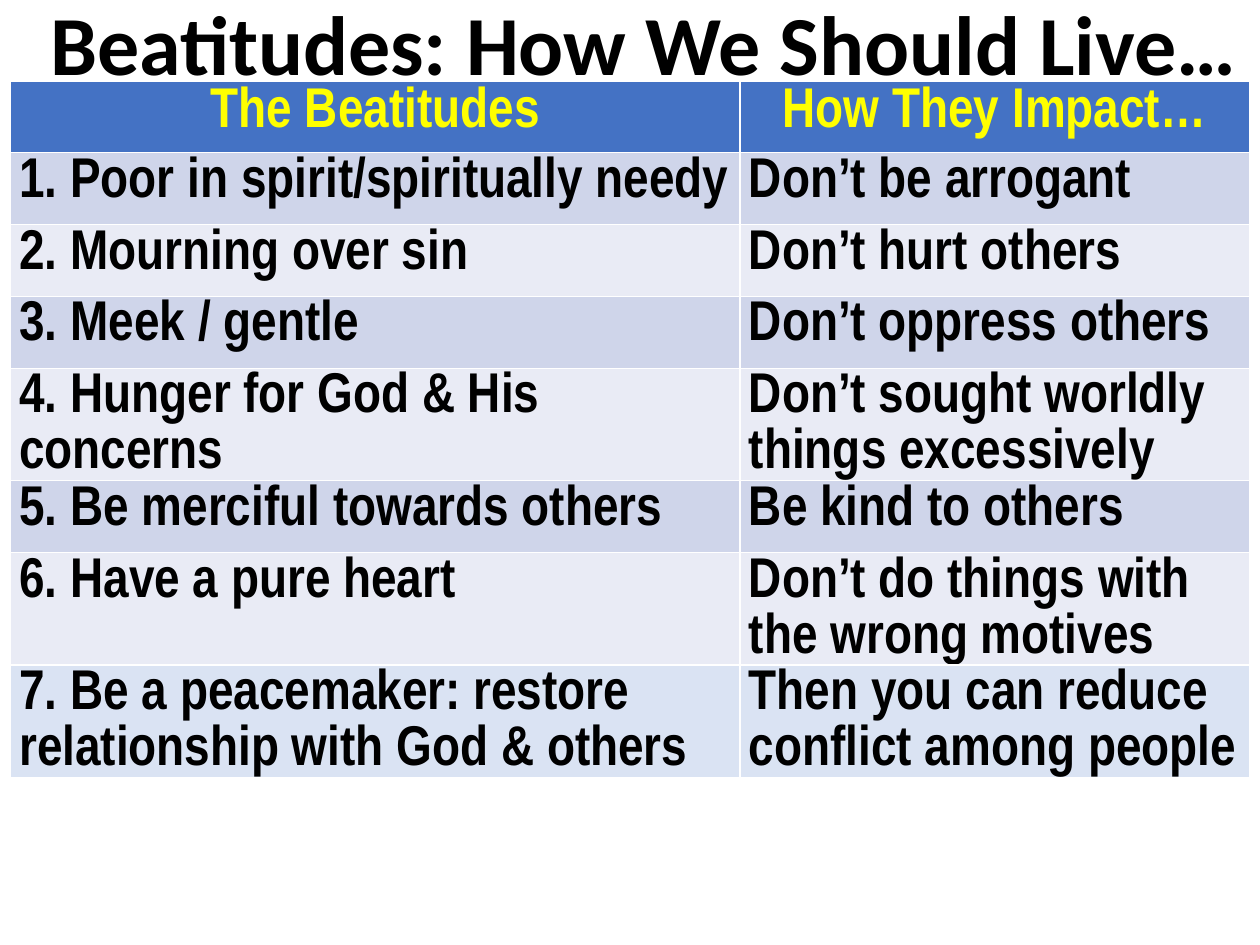
import pptx
import pptx.dml.color
import pptx.enum.text
import pptx.util

Pt = pptx.util.Pt
RGBColor = pptx.dml.color.RGBColor

COLORS = {
    "title": "000000",
    "header_fill": "4472C4",
    "header_text": "FFFF00",
    "body_text": "000000",
    "odd_row": "CFD5EA",
    "even_row": "E9EBF5",
    "last_row": "DAE3F3",
}

ROWS = [
    ("The Beatitudes", "How They Impact…"),
    ("1. Poor in spirit/spiritually needy", "Don’t be arrogant"),
    ("2. Mourning over sin", "Don’t hurt others"),
    ("3. Meek / gentle", "Don’t oppress others"),
    ("4. Hunger for God & His concerns", "Don’t sought worldly things excessively"),
    ("5. Be merciful towards others", "Be kind to others"),
    ("6. Have a pure heart", "Don’t do things with the wrong motives"),
    ("7. Be a peacemaker: restore relationship with God & others",
     "Then you can reduce conflict among people"),
]
COLUMN_WIDTHS = [417, 291]
ROW_HEIGHT = 41.1


def set_font(paragraph, name, size, color):
    font = paragraph.font
    font.name = name
    font.size = Pt(size)
    font.bold = True
    font.color.rgb = RGBColor.from_string(COLORS[color])


presentation = pptx.Presentation()
presentation.slide_width = Pt(720)
presentation.slide_height = Pt(540)
slide = presentation.slides.add_slide(presentation.slide_layouts[6])

# The default table style supplies the white cell borders
table = slide.shapes.add_table(
    len(ROWS), len(COLUMN_WIDTHS), Pt(6), Pt(46.2),
    Pt(sum(COLUMN_WIDTHS)), Pt(ROW_HEIGHT * len(ROWS))).table
for column, width in zip(table.columns, COLUMN_WIDTHS):
    column.width = Pt(width)

for row_index, texts in enumerate(ROWS):
    table.rows[row_index].height = Pt(ROW_HEIGHT)
    is_header = row_index == 0
    if is_header:
        fill = "header_fill"
    elif row_index == len(ROWS) - 1:
        fill = "last_row"
    else:
        fill = "odd_row" if row_index % 2 else "even_row"

    for column_index, text in enumerate(texts):
        cell = table.cell(row_index, column_index)
        cell.fill.solid()
        cell.fill.fore_color.rgb = RGBColor.from_string(COLORS[fill])
        cell.text = text
        paragraph = cell.text_frame.paragraphs[0]
        set_font(paragraph, "Arial Narrow", 32,
                 "header_text" if is_header else "body_text")
        if is_header:
            paragraph.alignment = pptx.enum.text.PP_ALIGN.CENTER
        else:
            paragraph.line_spacing = 1.07
            cell.margin_left = cell.margin_right = Pt(5)
            cell.margin_top = cell.margin_bottom = Pt(0)

title = slide.shapes.add_textbox(Pt(21.6), Pt(-8.6), Pt(700), Pt(65.5))
title_frame = title.text_frame
title_frame.word_wrap = False
title_frame.auto_size = pptx.enum.text.MSO_AUTO_SIZE.SHAPE_TO_FIT_TEXT
title_frame.text = "Beatitudes: How We Should Live…"
set_font(title_frame.paragraphs[0], "Calibri", 48, "title")

presentation.save("out.pptx")
